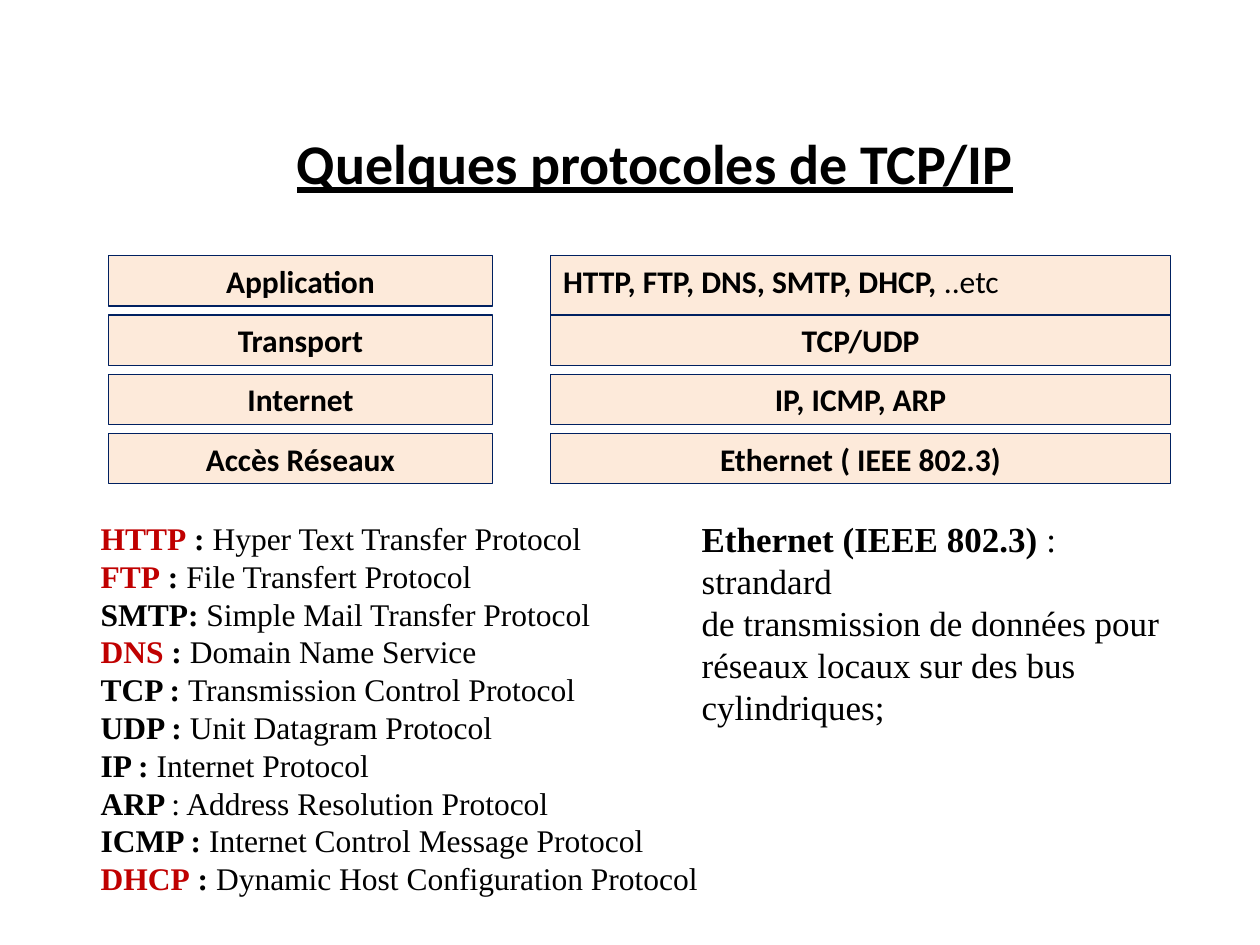
from pptx import Presentation
from pptx.dml.color import RGBColor
from pptx.enum.shapes import MSO_SHAPE
from pptx.enum.text import MSO_ANCHOR, PP_ALIGN
from pptx.util import Inches, Pt

RECTANGLE = MSO_SHAPE.RECTANGLE
TOP, MIDDLE = MSO_ANCHOR.TOP, MSO_ANCHOR.MIDDLE
LEFT, CENTER = PP_ALIGN.LEFT, PP_ALIGN.CENTER

COLORS = {"text": "000000", "accent": "C00000", "fill": "FDEADA", "line": "002060"}
TITLE = {"name": "Calibri", "size": Pt(32), "bold": True, "underline": True}
LABEL = {"name": "Calibri", "size": Pt(18), "bold": True}
DEFINITION = {"name": "Times New Roman", "size": Pt(18), "bold": True}
NOTE = {"name": "Times New Roman", "size": Pt(20), "bold": True}


def write(box, paragraphs, style, align=LEFT, anchor=TOP):
    """Fill a box; each paragraph is a list of (text, format changes)."""
    frame = box.text_frame
    frame.word_wrap = True
    frame.vertical_anchor = anchor
    for index, spans in enumerate(paragraphs):
        para = frame.paragraphs[0] if index == 0 else frame.add_paragraph()
        para.alignment = align
        for text, changes in spans:
            span = para.add_run()
            span.text = text
            values = {"color": "text", **style, **changes}
            span.font.color.rgb = RGBColor.from_string(COLORS[values.pop("color")])
            for name, value in values.items():
                setattr(span.font, name, value)


deck = Presentation()
deck.slide_width, deck.slide_height = Inches(10), Inches(7.5)
page = deck.slides.add_slide(deck.slide_layouts[6])
PLAIN = {"bold": False}
RED = {"color": "accent"}

# Title
title = page.shapes.add_textbox(Inches(0.7), Inches(0.7), Inches(9), Inches(1.17))
write(title, [[("Quelques protocoles de TCP/IP", {})]], TITLE, CENTER, MIDDLE)

# Note on Ethernet
note = page.shapes.add_textbox(Inches(5.47), Inches(4.06), Inches(3.91), Inches(1.78))
write(note, [
    [("Ethernet (IEEE 802.3) ", {}), (": strandard", PLAIN)],
    [("de transmission de données pour réseaux locaux sur des bus cylindriques;", PLAIN)],
], NOTE)

# Definitions of the acronyms: term, separator, meaning
definitions = [
    ("HTTP", " : ", "Hyper Text Transfer Protocol"),
    ("FTP", " : ", "File Transfert Protocol"),
    ("SMTP", ": ", "Simple Mail Transfer Protocol"),
    ("DNS", " : ", "Domain Name Service"),
    ("TCP", " : ", "Transmission Control Protocol"),
    ("UDP", " : ", "Unit Datagram Protocol"),
    ("IP", " : ", "Internet Protocol"),
    ("ARP", " ", ": Address Resolution Protocol"),
    ("ICMP", " : ", "Internet Control Message Protocol"),
    ("DHCP", " : ", "Dynamic Host Configuration Protocol"),
]
application_protocols = {"HTTP", "FTP", "DNS", "DHCP"}
glossary = page.shapes.add_textbox(Inches(0.7), Inches(4.07), Inches(5.08), Inches(3.43))
write(glossary, [
    [(term, RED if term in application_protocols else {}), (separator, {}), (meaning, PLAIN)]
    for term, separator, meaning in definitions
], DEFINITION)

# Layers on the left, their protocols on the right
layers = [
    ("Application", [("HTTP, FTP, DNS, SMTP, DHCP, ", {}), ("..etc", PLAIN)]),
    ("Transport", [("TCP/UDP", {})]),
    ("Internet", [("IP, ICMP, ARP", {})]),
    ("Accès Réseaux", [("Ethernet ( IEEE 802.3)", {})]),
]
for row, (layer, protocols) in enumerate(layers):
    # The first protocol box is taller and runs behind the next one
    right_height, right_align = (0.71, LEFT) if row == 0 else (0.4, CENTER)
    for left, width, height, spans, align in (
        (0.86, 3.05, 0.4, [(layer, {})], CENTER),
        (4.37, 4.92, right_height, protocols, right_align),
    ):
        box = page.shapes.add_shape(RECTANGLE, Inches(left), Inches(2.03 + 0.47 * row),
                                    Inches(width), Inches(height))
        box.shadow.inherit = False
        box.fill.solid()
        box.fill.fore_color.rgb = RGBColor.from_string(COLORS["fill"])
        box.line.color.rgb = RGBColor.from_string(COLORS["line"])
        box.line.width = Pt(0.75)
        write(box, [spans], LABEL, align)

deck.save("out.pptx")
